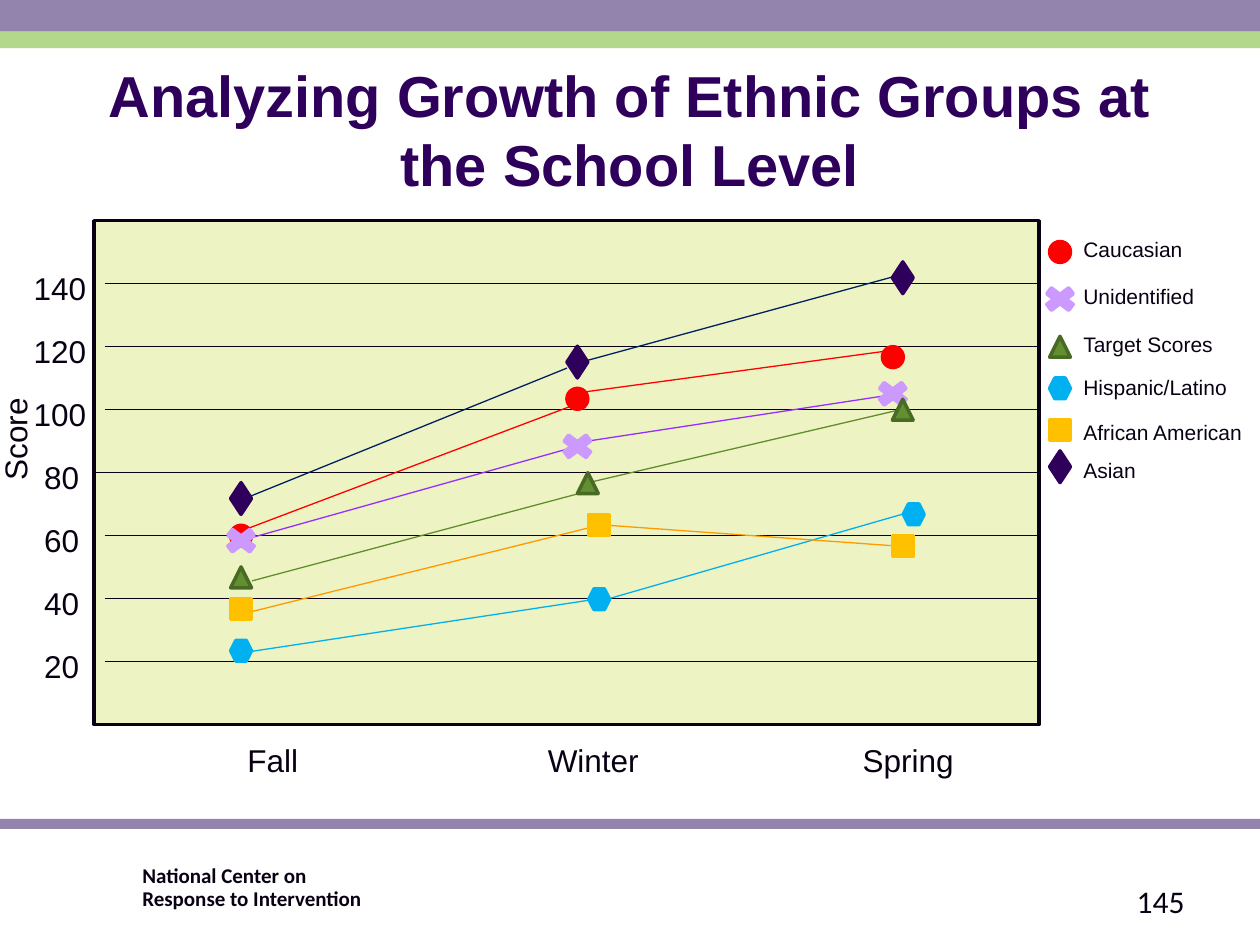
from dataclasses import dataclass

from lxml.etree import SubElement
from pptx import Presentation
from pptx.dml.color import RGBColor
from pptx.enum.shapes import MSO_CONNECTOR, MSO_SHAPE
from pptx.enum.text import MSO_ANCHOR, MSO_AUTO_SIZE, PP_ALIGN
from pptx.oxml.ns import qn
from pptx.slide import Slide
from pptx.text.text import TextFrame
from pptx.util import Cm, Pt

Point = tuple[float, float]
INK = "0A0014"
PLUM = "2E005C"
MAUVE = "9284AC"
SMALL_MARKER = (0.42, 0.42)
LEGEND_MARKER_X = 21.37
LEGEND_TEXT_X = 21.59
GRID_TOP = 5.72
GRID_STEP = 1.27


@dataclass
class Series:
    name: str
    marker: MSO_SHAPE
    marker_size: tuple[float, float]
    fill: str
    outline: str
    line: str
    points: list[Point]
    segments: list[tuple[Point, Point]]
    legend_marker_y: float
    legend_text_y: float


SERIES = [
    Series("Caucasian", MSO_SHAPE.OVAL, SMALL_MARKER, "FF0000", "FF0000", "FF0000",
           [(4.86, 10.8), (11.64, 8.04), (18, 7.2)],
           [((5.03, 10.64), (11.48, 8.2)), ((11.79, 7.9), (18.14, 7.04))], 5.08, 4.65),
    Series("Unidentified", MSO_SHAPE.MATH_MULTIPLY, (0.85, 0.64), "CC99FF", "CC99FF", "962EFF",
           [(4.86, 10.9), (11.64, 9), (18, 7.94)],
           [((5.03, 10.85), (11.48, 9.04)), ((11.86, 8.89), (17.83, 7.98))], 6.03, 5.59),
    Series("Target Scores", MSO_SHAPE.ISOSCELES_TRIANGLE, SMALL_MARKER, "628F31", "496A24", "608E2E",
           [(4.86, 11.64), (11.85, 9.74), (18.2, 8.26)],
           [((5.08, 11.71), (11.63, 9.96)), ((11.86, 9.73), (18.14, 8.26))], 6.99, 6.55),
    Series("Hispanic/Latino", MSO_SHAPE.HEXAGON, SMALL_MARKER, "00B0F0", "00B0F0", "00B0F0",
           [(4.86, 13.12), (12.08, 12.08), (18.42, 10.37)],
           [((5.08, 13.13), (12.07, 12.07)), ((12.27, 12.07), (18.21, 10.36))], 7.83, 7.42),
    Series("African American", MSO_SHAPE.RECTANGLE, SMALL_MARKER, "FFC000", "FFC000", "FF9900",
           [(4.86, 12.28), (12.08, 10.58), (18.2, 11.01)],
           [((5.03, 12.34), (12.07, 10.59)), ((12.27, 10.59), (17.98, 11))], 8.67, 8.33),
    Series("Asian", MSO_SHAPE.DIAMOND, (0.42, 0.64), PLUM, PLUM, "002060",
           [(4.86, 10.05), (11.64, 7.3), (18.2, 5.6)],
           [((5.03, 10.01), (11.43, 7.42)), ((11.86, 7.26), (18.26, 5.51))], 9.41, 9.09),
]


def color(value: str) -> RGBColor:
    return RGBColor.from_string(value)


def draw_shape(slide: Slide, kind: MSO_SHAPE, left: float, top: float, width: float,
               height: float, fill: str, outline: str | None = None) -> None:
    shape = slide.shapes.add_shape(kind, Cm(left), Cm(top), Cm(width), Cm(height))
    shape.shadow.inherit = False
    shape.fill.solid()
    shape.fill.fore_color.rgb = color(fill)
    if outline is None:
        shape.line.fill.background()
    else:
        shape.line.color.rgb = color(outline)
        shape.line.width = Pt(2)


def draw_line(slide: Slide, start: Point, end: Point, line_color: str) -> None:
    connector = slide.shapes.add_connector(
        MSO_CONNECTOR.STRAIGHT, Cm(start[0]), Cm(start[1]), Cm(end[0]), Cm(end[1]))
    connector.line.color.rgb = color(line_color)
    connector.line.width = Pt(0.75)
    SubElement(connector._element.spPr, qn("a:effectLst"))


def write_text(frame: TextFrame, text: str, size: float, font: str = "Arial",
               font_color: str = INK, bold: bool = False,
               alignment: PP_ALIGN = PP_ALIGN.LEFT) -> None:
    frame.word_wrap = True
    frame.auto_size = MSO_AUTO_SIZE.NONE
    paragraph = frame.paragraphs[0]
    paragraph.alignment = alignment
    for index, line in enumerate(text.split("\n")):
        if index:
            paragraph.add_line_break()
        run = paragraph.add_run()
        run.text = line
        run.font.size = Pt(size)
        run.font.name = font
        run.font.bold = bold
        run.font.color.rgb = color(font_color)


def draw_text(slide: Slide, text: str, left: float, top: float, width: float, height: float,
              size: float = 18, font: str = "Arial", bold: bool = False,
              alignment: PP_ALIGN = PP_ALIGN.LEFT, rotation: float = 0) -> TextFrame:
    box = slide.shapes.add_textbox(Cm(left), Cm(top), Cm(width), Cm(height))
    box.rotation = rotation
    write_text(box.text_frame, text, size, font, bold=bold, alignment=alignment)
    return box.text_frame


def draw_marker(slide: Slide, series: Series, center: Point) -> None:
    width, height = series.marker_size
    draw_shape(slide, series.marker, center[0] - width / 2, center[1] - height / 2,
               width, height, series.fill, series.outline)


def draw_frame(slide: Slide) -> None:
    for top, height, fill in [(16.51, 0.2, MAUVE), (0, 0.64, MAUVE), (0.64, 0.33, "B4D88B")]:
        draw_shape(slide, MSO_SHAPE.RECTANGLE, 0, top, 25.4, height, fill)
    footer = draw_text(slide, "National Center on \nResponse to Intervention",
                       2.77, 17.35, 8.23, 0.76, 12, "Calibri", True)
    footer.margin_left = footer.margin_right = Cm(0.1)
    footer.margin_top = footer.margin_bottom = Cm(0.1)
    footer.paragraphs[0].line_spacing = 0.9
    number = draw_text(slide, "145", 18.21, 17.65, 5.92, 1.02, 18, "Calibri",
                       alignment=PP_ALIGN.RIGHT)
    number.vertical_anchor = MSO_ANCHOR.MIDDLE


def draw_title(slide: Slide) -> None:
    title = slide.shapes.title
    title.left, title.top, title.width, title.height = Cm(1.27), Cm(1.27), Cm(22.86), Cm(2.67)
    write_text(title.text_frame, "Analyzing Growth of Ethnic Groups at the School Level",
               33, font_color=PLUM, bold=True, alignment=PP_ALIGN.CENTER)
    title.text_frame.vertical_anchor = MSO_ANCHOR.MIDDLE


def draw_axes(slide: Slide) -> None:
    draw_shape(slide, MSO_SHAPE.RECTANGLE, 1.9, 4.45, 19.05, 10.16, "EEF3C3", INK)
    for index, score in enumerate(range(140, 0, -20)):
        y = GRID_TOP + index * GRID_STEP
        line_left = 1.9 if score == 80 else 2.11
        draw_line(slide, (line_left, y), (20.95, y), INK)
        label_left, label_width = (0.43, 1.7) if score >= 100 else (0.64, 1.27)
        draw_text(slide, str(score), label_left, y - 0.43, label_width, 1.02)
    for season, left, width in [("Fall", 3.81, 3.38), ("Winter", 10.16, 3.6), ("Spring", 16.51, 3.6)]:
        draw_text(slide, season, left, 14.81, width, 1.02, alignment=PP_ALIGN.CENTER)
    draw_text(slide, "Score", -1.5, 7.62, 3.61, 1.02, rotation=270)


def draw_series(slide: Slide) -> None:
    for series in SERIES:
        for start, end in series.segments:
            draw_line(slide, start, end, series.line)
    for series in SERIES:
        for center in [*series.points, (LEGEND_MARKER_X, series.legend_marker_y)]:
            draw_marker(slide, series, center)
        draw_text(slide, series.name, LEGEND_TEXT_X, series.legend_text_y, 3.81, 0.76, 12)


def main() -> None:
    presentation = Presentation()
    presentation.slide_width = Cm(25.4)
    presentation.slide_height = Cm(19.05)
    slide = presentation.slides.add_slide(presentation.slide_layouts[5])
    draw_frame(slide)
    draw_title(slide)
    draw_axes(slide)
    draw_series(slide)
    presentation.save("out.pptx")


if __name__ == "__main__":
    main()
